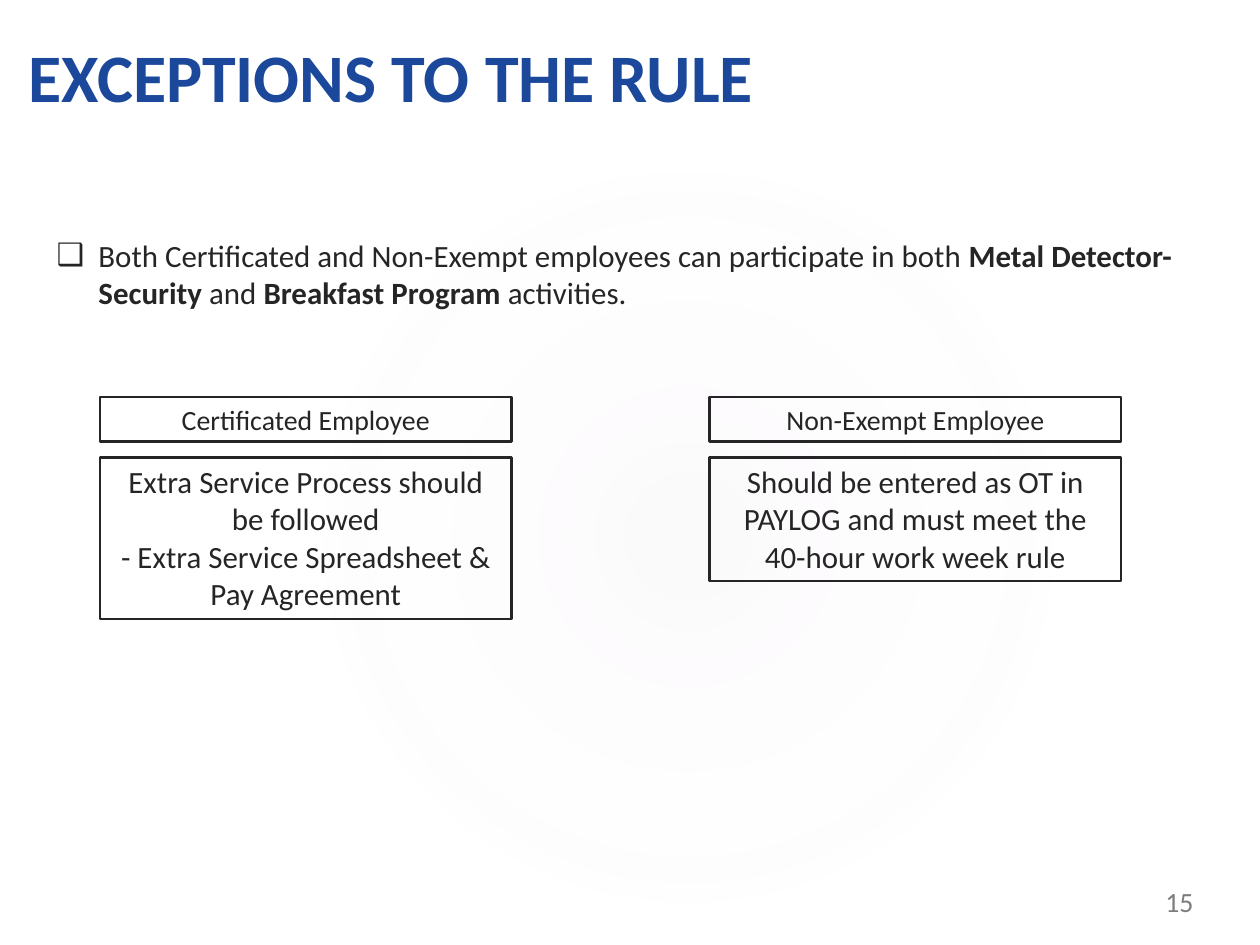
from dataclasses import dataclass

from lxml.etree import SubElement
from pptx import Presentation
from pptx.dml.color import RGBColor
from pptx.enum.shapes import MSO_SHAPE
from pptx.enum.text import MSO_ANCHOR, MSO_AUTO_SIZE, PP_ALIGN
from pptx.oxml import parse_xml
from pptx.oxml.ns import nsdecls, qn
from pptx.util import Pt


@dataclass(frozen=True)
class Theme:
    font: str = "Calibri"
    title_color: str = "1B489B"
    ink: str = "252525"
    muted: str = "7C7C7C"
    glow: str = "C4BCC6"
    paper: str = "FFFFFF"
    title_size: float = 44
    body_size: float = 20
    label_size: float = 18


THEME = Theme()
COLUMN_LEFTS = (64.8, 459.4)
COLUMN_WIDTH = 266.4
LABEL_TOP, LABEL_HEIGHT = 257, 29
DETAIL_TOP = 296.3
COLUMNS = (
    ("Certificated Employee", 104.4,
     ["Extra Service Process should be followed",
      "- Extra Service Spreadsheet & Pay Agreement"]),
    ("Non-Exempt Employee", 79.9,
     ["Should be entered as OT in PAYLOG and must meet the 40-hour work week rule"]),
)
RULE = [("Both Certificated and Non-Exempt employees can participate in both ", False),
        ("Metal Detector-Security", True), (" and ", False),
        ("Breakfast Program ", True), ("activities.", False)]


def place(shape, left, top, width, height):
    shape.left, shape.top = Pt(left), Pt(top)
    shape.width, shape.height = Pt(width), Pt(height)


def write(shape, paragraphs, *, size=THEME.body_size, color=THEME.ink, bold=False,
          align=PP_ALIGN.LEFT, anchor=MSO_ANCHOR.TOP, bullet=None):
    """Fill a shape with paragraphs, each a string or a list of (text, bold) runs."""
    frame = shape.text_frame
    frame.word_wrap = True
    frame.auto_size = MSO_AUTO_SIZE.NONE
    frame.vertical_anchor = anchor
    for index, content in enumerate(paragraphs):
        paragraph = frame.add_paragraph() if index else frame.paragraphs[0]
        if bullet:
            add_bullet(paragraph, bullet)
        paragraph.alignment = align
        paragraph.space_before = Pt(0)
        runs = [(content, bold)] if isinstance(content, str) else content
        for text, run_bold in runs:
            run = paragraph.add_run()
            run.text = text
            run.font.name = THEME.font
            run.font.size = Pt(size)
            run.font.bold = run_bold
            run.font.color.rgb = RGBColor.from_string(color)


def add_bullet(paragraph, character, indent=27):
    properties = paragraph._p.get_or_add_pPr()
    properties.set("marL", str(Pt(indent)))
    properties.set("indent", str(-Pt(indent)))
    SubElement(properties, qn("a:buFont")).set("typeface", THEME.font)
    SubElement(properties, qn("a:buChar")).set("char", character)


def add_box(slide, left, top, height, paragraphs, size=THEME.body_size):
    box = slide.shapes.add_shape(MSO_SHAPE.RECTANGLE, Pt(left), Pt(top),
                                 Pt(COLUMN_WIDTH), Pt(height))
    box.shadow.inherit = False
    box.fill.background()
    box.line.color.rgb = RGBColor.from_string(THEME.ink)
    box.line.width = Pt(1.5)
    write(box, paragraphs, size=size, align=PP_ALIGN.CENTER)


def add_glow(slide):
    """Add the faint radial ellipse behind everything else."""
    glow = slide.shapes.add_shape(MSO_SHAPE.OVAL, Pt(122.4), Pt(92.9), Pt(645.8), Pt(509))
    glow.rotation = 328.7
    glow.shadow.inherit = False
    glow.line.fill.background()
    gradient = parse_xml(
        f'<a:gradFill {nsdecls("a")} rotWithShape="1"><a:gsLst>'
        f'<a:gs pos="0"><a:srgbClr val="{THEME.glow}"><a:alpha val="7000"/></a:srgbClr></a:gs>'
        f'<a:gs pos="58000"><a:srgbClr val="{THEME.paper}"><a:alpha val="0"/></a:srgbClr></a:gs>'
        '</a:gsLst><a:path path="circle">'
        '<a:fillToRect l="50000" t="50000" r="50000" b="50000"/></a:path></a:gradFill>')
    glow._element.spPr.find(qn("a:prstGeom")).addnext(gradient)
    slide.shapes.title._element.addprevious(glow._element)


def add_page_number(slide, number):
    box = slide.shapes.add_textbox(Pt(747.4), Pt(568.1), Pt(37.4), Pt(27.4))
    box.text_frame.margin_bottom = Pt(0.7)
    write(box, [number], size=THEME.label_size, color=THEME.muted, anchor=MSO_ANCHOR.BOTTOM)


def main():
    presentation = Presentation()
    presentation.slide_width, presentation.slide_height = Pt(815.76), Pt(612)
    slide = presentation.slides.add_slide(presentation.slide_layouts[1])
    add_glow(slide)

    title, body = slide.shapes.title, slide.placeholders[1]
    place(title, 11.5, 13.7, 688.3, 64.8)
    write(title, ["EXCEPTIONS TO THE RULE"], size=THEME.title_size,
          color=THEME.title_color, bold=True, anchor=MSO_ANCHOR.BOTTOM)
    place(body, 29.5, 149.8, 777.6, 55.4)
    write(body, [RULE], bullet="❑")

    for left, (label, detail_height, details) in zip(COLUMN_LEFTS, COLUMNS):
        add_box(slide, left, LABEL_TOP, LABEL_HEIGHT, [label], THEME.label_size)
        add_box(slide, left, DETAIL_TOP, detail_height, details)
    add_page_number(slide, "15")
    presentation.save("out.pptx")


if __name__ == "__main__":
    main()
